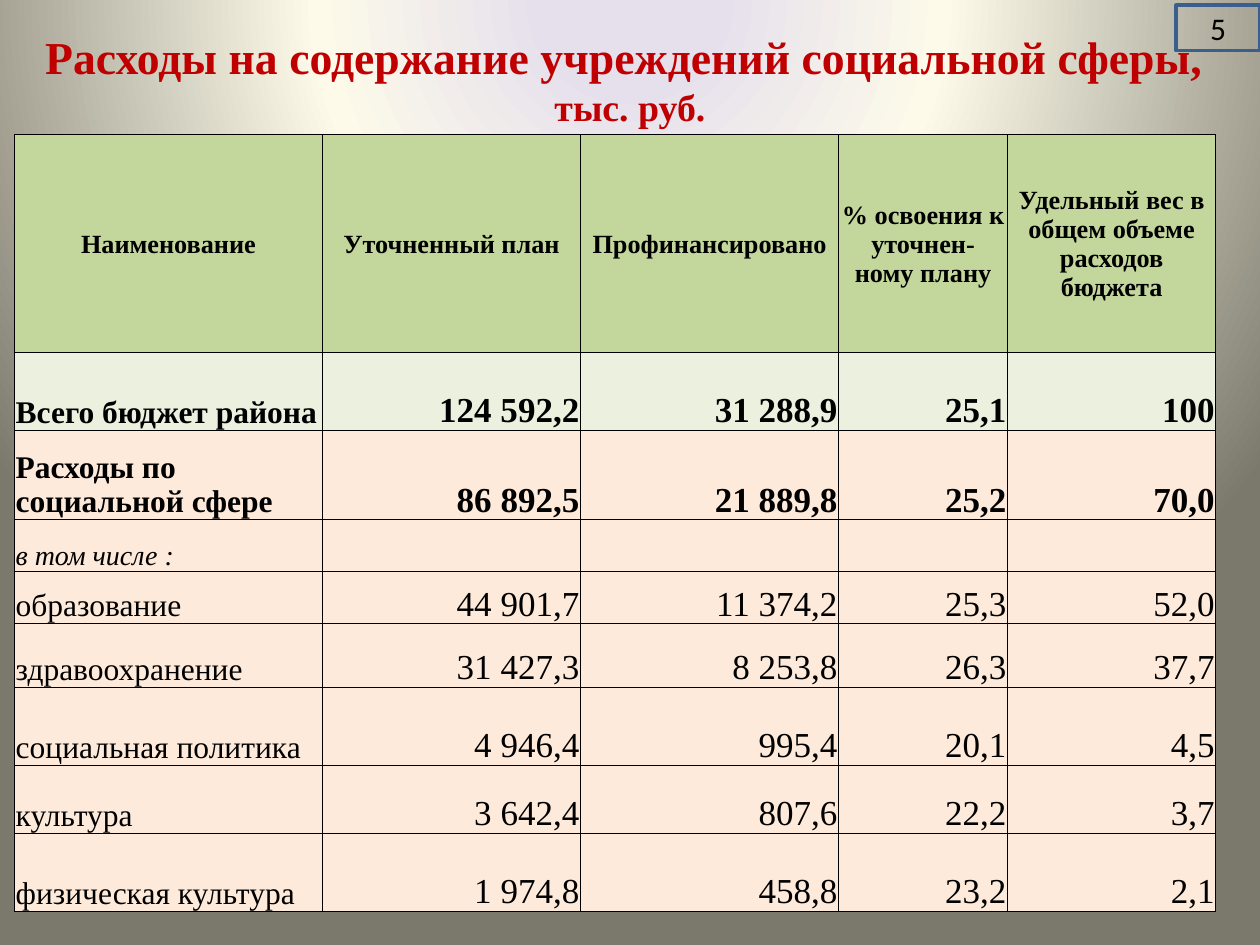
from lxml import etree
from pptx import Presentation
from pptx.dml.color import RGBColor
from pptx.enum.shapes import MSO_SHAPE
from pptx.enum.text import MSO_ANCHOR, PP_ALIGN
from pptx.oxml import parse_xml
from pptx.oxml.ns import nsdecls
from pptx.util import Pt

COLORS = {
    "title": "C00000", "text": "000000", "border": "000000", "frame": "3A5F8C",
    "header": "C3D69B", "total": "EBF1DE", "body": "FDEADA",
    "glow": "E6E0EC", "cream": "FDFAEA", "edge": "7B796B",
}
HEADERS = [
    "Наименование", "Уточненный план", "Профинансировано",
    "% освоения к уточнен-\nному плану",
    "Удельный вес в общем объеме расходов бюджета",
]
ROWS = [
    ["Всего бюджет района", "124 592,2", "31 288,9", "25,1", "100"],
    ["Расходы по социальной сфере", "86 892,5", "21 889,8", "25,2", "70,0"],
    ["в том числе :", "", "", "", ""],
    ["образование", "44 901,7", "11 374,2", "25,3", "52,0"],
    ["здравоохранение", "31 427,3", "8 253,8", "26,3", "37,7"],
    ["социальная политика", "4 946,4", "995,4", "20,1", "4,5"],
    ["культура", "3 642,4", "807,6", "22,2", "3,7"],
    ["физическая культура", "1 974,8", "458,8", "23,2", "2,1"],
]
COLUMN_WIDTHS = [176, 147.5, 147.5, 96.5, 119]
ROW_HEIGHTS = [124.5, 44.5, 51, 29.7, 29.7, 36.5, 44.5, 39, 44.5]


def write(para, text, size=18, color="text", font="Times New Roman",
          bold=False, italic=False, align=PP_ALIGN.CENTER):
    para.alignment = align
    span = para.add_run()
    span.text = text
    span.font.name = font
    span.font.size = Pt(size)
    span.font.bold = bold
    span.font.italic = italic
    span.font.color.rgb = RGBColor.from_string(COLORS[color])


def add_borders(cell):
    properties = cell._tc.get_or_add_tcPr()
    for index, side in enumerate(("lnL", "lnR", "lnT", "lnB")):
        properties.insert(index, parse_xml(
            f'<a:{side} {nsdecls("a")} w="6350"><a:solidFill>'
            f'<a:srgbClr val="{COLORS["border"]}"/></a:solidFill></a:{side}>'))


deck = Presentation()
deck.slide_width, deck.slide_height = Pt(720), Pt(540)
page = deck.slides.add_slide(deck.slide_layouts[6])

# Radial background, centred on the slide's top half
page.background.fill.gradient()
gradient = page.element.find(".//{*}gradFill")
for child in list(gradient):
    gradient.remove(child)
stops = "".join(
    f'<a:gs pos="{position * 1000}"><a:srgbClr val="{COLORS[name]}"/></a:gs>'
    for position, name in ((0, "glow"), (11, "glow"), (40, "cream"), (100, "edge")))
gradient.append(parse_xml(f'<a:gsLst {nsdecls("a")}>{stops}</a:gsLst>'))
circle = etree.SubElement(gradient, gradient[0].tag.replace("gsLst", "path"), path="circle")
etree.SubElement(circle, gradient[0].tag.replace("gsLst", "fillToRect"),
                 l="50000", t="-80000", r="50000", b="180000")

# Title
title = page.shapes.add_textbox(Pt(0), Pt(9.4), Pt(720), Pt(67.6)).text_frame
title.word_wrap = True
title.vertical_anchor = MSO_ANCHOR.BOTTOM
para = title.paragraphs[0]
write(para, "Расходы на содержание учреждений социальной сферы, ",
      size=26.1, color="title", bold=True)
para.add_line_break()
write(para, "тыс. руб.", size=21.6, color="title", bold=True)

# Spending table
table = page.shapes.add_table(
    len(ROW_HEIGHTS), len(COLUMN_WIDTHS), Pt(8.3), Pt(77),
    Pt(sum(COLUMN_WIDTHS)), Pt(sum(ROW_HEIGHTS))).table
for column, width in zip(table.columns, COLUMN_WIDTHS):
    column.width = Pt(width)
for row, height in zip(table.rows, ROW_HEIGHTS):
    row.height = Pt(height)

for row_index, values in enumerate([HEADERS] + ROWS):
    fill = {0: "header", 1: "total"}.get(row_index, "body")
    is_header = row_index == 0
    is_note = values[0] == "в том числе :"
    for column_index, value in enumerate(values):
        cell = table.cell(row_index, column_index)
        cell.margin_left = cell.margin_right = cell.margin_top = Pt(0.7)
        cell.margin_bottom = Pt(0)
        cell.vertical_anchor = MSO_ANCHOR.MIDDLE if is_header else MSO_ANCHOR.BOTTOM
        cell.fill.solid()
        cell.fill.fore_color.rgb = RGBColor.from_string(COLORS[fill])
        add_borders(cell)
        if not value:
            continue
        if is_header:
            size, align = 15, PP_ALIGN.CENTER
        elif column_index:
            size, align = 20, PP_ALIGN.RIGHT
        else:
            size = 16 if is_note else 18
            align = PP_ALIGN.JUSTIFY if row_index > 3 else PP_ALIGN.LEFT
        frame = cell.text_frame
        for line_index, line in enumerate(value.split("\n")):
            para = frame.add_paragraph() if line_index else frame.paragraphs[0]
            write(para, line, size=size, align=align, bold=row_index < 3, italic=is_note)

# Page number
number_box = page.shapes.add_shape(MSO_SHAPE.RECTANGLE, Pt(672), Pt(3), Pt(48), Pt(26))
number_box.shadow.inherit = False
number_box.fill.background()
number_box.line.color.rgb = RGBColor.from_string(COLORS["frame"])
number_box.line.width = Pt(2)
number_box.text_frame.vertical_anchor = MSO_ANCHOR.MIDDLE
write(number_box.text_frame.paragraphs[0], "5", font="Calibri")

deck.save("out.pptx")
